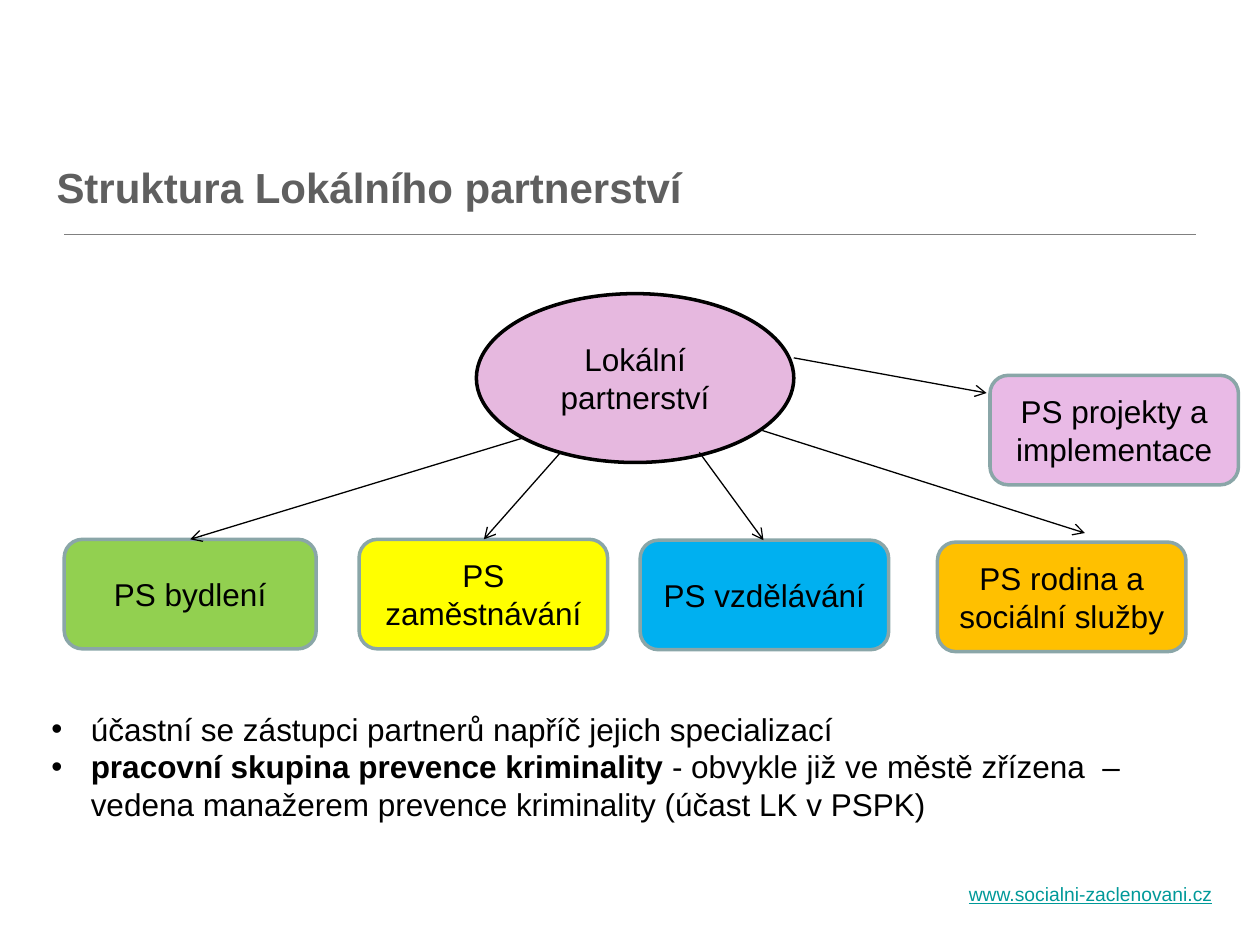
from lxml import etree
from pptx import Presentation
from pptx.dml.color import RGBColor
from pptx.enum.shapes import MSO_CONNECTOR, MSO_SHAPE
from pptx.enum.text import MSO_ANCHOR, PP_ALIGN
from pptx.oxml.ns import qn
from pptx.util import Pt

STRAIGHT = MSO_CONNECTOR.STRAIGHT
GROUP_BOX = MSO_SHAPE.FLOWCHART_ALTERNATE_PROCESS
OVAL = MSO_SHAPE.OVAL
MIDDLE = MSO_ANCHOR.MIDDLE
CENTER = PP_ALIGN.CENTER


def rgb(color):
    return RGBColor.from_string(color)


def add_run(paragraph, text, size=18, color="000000", bold=False, underline=False):
    run = paragraph.add_run()
    run.text = text
    font = run.font
    font.name = "Arial"
    font.size = Pt(size)
    font.bold = bold
    font.underline = underline
    font.color.rgb = rgb(color)


prs = Presentation()
prs.slide_width, prs.slide_height = Pt(720), Pt(540)
slide = prs.slides.add_slide(prs.slide_layouts[6])
shapes = slide.shapes

# Web address and title
web = shapes.add_textbox(Pt(546.5), Pt(500.4), Pt(170), Pt(20)).text_frame
web.word_wrap = True
add_run(web.paragraphs[0], "www.socialni-zaclenovani.cz", 11, "009999", underline=True)

title = shapes.add_textbox(Pt(25.2), Pt(88.6), Pt(669), Pt(36)).text_frame
title.word_wrap = True
add_run(title.paragraphs[0], "Struktura Lokálního partnerství", 24, "5F5F5F", bold=True)

# Notes under the diagram
notes = shapes.add_textbox(Pt(22.3), Pt(402), Pt(674.6), Pt(75)).text_frame
notes.word_wrap = True
note_texts = [
    [("účastní se zástupci partnerů napříč jejich specializací", False)],
    [("pracovní skupina prevence kriminality ", True),
     ("- obvykle již ve městě zřízena  –  vedena manažerem prevence kriminality "
      "(účast LK v PSPK)", False)],
]
for index, parts in enumerate(note_texts):
    note = notes.add_paragraph() if index else notes.paragraphs[0]
    properties = note._p.get_or_add_pPr()
    properties.set("marL", str(Pt(22.5)))
    properties.set("indent", str(-Pt(22.5)))
    etree.SubElement(properties, qn("a:buFont"), typeface="Arial")
    etree.SubElement(properties, qn("a:buChar"), char="•")
    for text, bold in parts:
        add_run(note, text, bold=bold)

# Partnership and its working groups: text, shape, left, top, width, height, fill, line
nodes = [
    ("PS bydlení", GROUP_BOX, 36.7, 308.2, 144, 62.6, "92D050", "8AA6A8"),
    ("PS zaměstnávání", GROUP_BOX, 205.2, 308.2, 142, 62.6, "FFFF00", "8AA6A8"),
    ("PS vzdělávání", GROUP_BOX, 365.8, 308.7, 142, 62.6, "00B0F0", "8AA6A8"),
    ("PS rodina a sociální služby", GROUP_BOX, 535.7, 309.8, 142, 62.6, "FFC000", "8AA6A8"),
    ("PS projekty a implementace", GROUP_BOX, 565.7, 214.5, 142, 62.6, "E9BAE6", "8AA6A8"),
    ("Lokální partnerství", OVAL, 272.2, 167.8, 181.4, 96.5, "E6B8DF", "000000"),
]
for text, outline, left, top, width, height, fill, line in nodes:
    node = shapes.add_shape(outline, Pt(left), Pt(top), Pt(width), Pt(height))
    node.shadow.inherit = False
    node.fill.solid()
    node.fill.fore_color.rgb = rgb(fill)
    node.line.color.rgb = rgb(line)
    node.line.width = Pt(2)
    label = node.text_frame
    label.word_wrap = True
    label.vertical_anchor = MIDDLE
    label.paragraphs[0].alignment = CENTER
    add_run(label.paragraphs[0], text)

# Rule under the title, then arrows from the partnership to each group
links = [
    (36.7, 133.9, 683.3, 133.9, "808080", False),
    (298.8, 250.3, 108.7, 308.2, "000000", True),
    (320.4, 258.5, 276.5, 308.2, "000000", True),
    (399.6, 258.5, 436.3, 308.7, "000000", True),
    (435.6, 246, 619.9, 304.6, "000000", True),
    (453.6, 204.5, 563.8, 224.6, "000000", True),
]
for x1, y1, x2, y2, color, has_arrow in links:
    link = shapes.add_connector(STRAIGHT, Pt(x1), Pt(y1), Pt(x2), Pt(y2))
    link.line.color.rgb = rgb(color)
    link.line.width = Pt(0.75)
    if has_arrow:
        etree.SubElement(link.line._get_or_add_ln(), qn("a:tailEnd"), type="arrow")
    etree.SubElement(link._element.spPr, qn("a:effectLst"))

prs.save("out.pptx")
